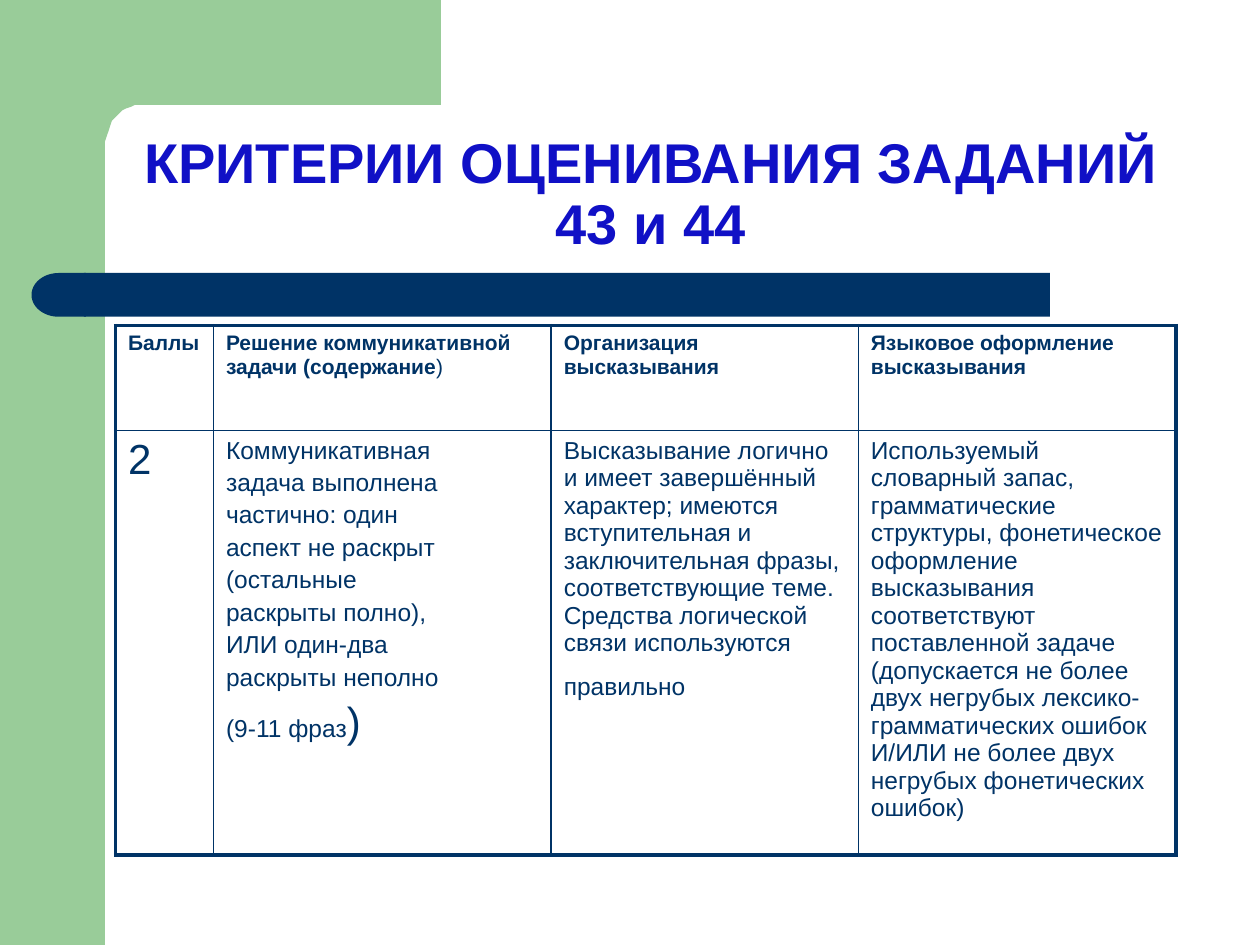
"""Build the slide with the scoring criteria for tasks 43 and 44."""
from math import cos, pi, sin

from lxml.etree import SubElement
from pptx import Presentation
from pptx.dml.color import RGBColor
from pptx.enum.shapes import MSO_SHAPE
from pptx.enum.text import MSO_ANCHOR, PP_ALIGN
from pptx.oxml.ns import qn
from pptx.util import Pt

GREEN = RGBColor(0x99, 0xCC, 0x99)
NAVY = RGBColor(0x00, 0x33, 0x66)
BLUE = RGBColor(0x10, 0x10, 0xC6)
FONT = "Arial"
TITLE = "КРИТЕРИИ ОЦЕНИВАНИЯ ЗАДАНИЙ 43 и 44"
COLUMNS = [56, 193, 175.5, 181.5]
ROWS = [60, 233]
THICK, THIN = 2.25, 1

HEADER = [
    [[("Баллы", 12, True)]],
    [[("Решение коммуникативной задачи (содержание", 12, True), (")", 12, False)]],
    [[("Организация высказывания", 12, True)]],
    [[("Языковое оформление высказывания", 12, True)]],
]
CONTENT_LINES = [
    "Коммуникативная",
    "задача выполнена",
    "частично: один",
    "аспект не раскрыт",
    "(остальные",
    "раскрыты полно),",
    "ИЛИ один-два",
    "раскрыты неполно",
]
ORGANISATION = (
    "Высказывание логично и имеет завершённый характер; имеются "
    "вступительная и заключительная фразы, соответствующие теме. "
    "Средства логической связи используются правильно"
)
LANGUAGE = (
    "Используемый словарный запас, грамматические структуры, фонетическое "
    "оформление высказывания соответствуют поставленной задаче (допускается "
    "не более двух негрубых лексико-грамматических ошибок И/ИЛИ не более "
    "двух негрубых фонетических ошибок)"
)
SCORE_ROW = [
    [[("2", 24, False)]],
    [[(line, 14, False)] for line in CONTENT_LINES]
    + [[("(9-11 фраз", 14, False), (")", 24, False)]],
    [[(ORGANISATION, 14, False), (" ", 24, False)]],
    [[(LANGUAGE, 14, False)]],
]


def paint(sp, color):
    """Give a shape a plain fill without line or shadow."""
    sp.fill.solid()
    sp.fill.fore_color.rgb = color
    sp.line.fill.background()
    sp.shadow.inherit = False


def add_block(slide, kind, left, top, width, height, color):
    """Add a filled preset shape."""
    sp = slide.shapes.add_shape(kind, Pt(left), Pt(top), Pt(width), Pt(height))
    paint(sp, color)
    return sp


def add_corner(slide):
    """Add the green top band with its rounded inner corner."""
    angles = [step * pi / 24 for step in range(13)]
    arc = [(80 - 20 * sin(a), 84 - 24 * cos(a)) for a in angles]
    points = [(252, 0), (252, 60), *arc, (60, 92), (36, 92), (36, 0)]
    builder = slide.shapes.build_freeform(*points[0], scale=Pt(1))
    builder.add_line_segments(points[1:], close=True)
    paint(builder.convert_to_shape(), GREEN)


def format_run(r, size, bold, color):
    """Set the font of a run."""
    r.font.name = FONT
    r.font.size = Pt(size)
    r.font.bold = bold
    r.font.color.rgb = color


def add_title(slide):
    """Add the centred slide title."""
    tf = slide.shapes.add_textbox(Pt(60), Pt(60), Pt(624), Pt(90)).text_frame
    tf.word_wrap = True
    tf.vertical_anchor = MSO_ANCHOR.BOTTOM
    tf.text = TITLE
    p = tf.paragraphs[0]
    p.alignment = PP_ALIGN.CENTER
    p.line_spacing = 0.9
    format_run(p.runs[0], 32, True, BLUE)


def fill_cell(cell, paragraphs):
    """Write the paragraphs of a cell, each a list of text, size and bold."""
    cell.fill.background()
    tf = cell.text_frame
    for i, runs in enumerate(paragraphs):
        p = tf.add_paragraph() if i else tf.paragraphs[0]
        p.space_before = Pt(0.2 * max(size for _, size, _ in runs))
        for text, size, bold in runs:
            r = p.add_run()
            r.text = text
            format_run(r, size, bold, NAVY)


def set_borders(cell, widths):
    """Draw the left, right, top and bottom borders of a cell."""
    tc_pr = cell._tc.get_or_add_tcPr()
    for i, (side, width) in enumerate(zip("LRTB", widths)):
        ln = SubElement(tc_pr, qn(f"a:ln{side}"), w=str(Pt(width)))
        fill = SubElement(ln, qn("a:solidFill"))
        SubElement(fill, qn("a:srgbClr"), val=str(NAVY))
        tc_pr.insert(i, ln)


def add_criteria(slide):
    """Add the criteria table with a thick outer frame."""
    rows = [HEADER, SCORE_ROW]
    frame = slide.shapes.add_table(
        len(ROWS), len(COLUMNS), Pt(66), Pt(186), Pt(sum(COLUMNS)), Pt(sum(ROWS))
    )
    table = frame.table
    table.first_row = table.horz_banding = False
    for column, width in zip(table.columns, COLUMNS):
        column.width = Pt(width)
    for i, height in enumerate(ROWS):
        table.rows[i].height = Pt(height)
        for j, paragraphs in enumerate(rows[i]):
            cell = table.cell(i, j)
            fill_cell(cell, paragraphs)
            outer = (j == 0, j == len(COLUMNS) - 1, i == 0, i == len(ROWS) - 1)
            set_borders(cell, [THICK if edge else THIN for edge in outer])


def main():
    """Build and save the slide."""
    prs = Presentation()
    prs.slide_width, prs.slide_height = Pt(720), Pt(540)
    slide = prs.slides.add_slide(prs.slide_layouts[6])
    add_block(slide, MSO_SHAPE.RECTANGLE, 0, 0, 60, 540, GREEN)
    add_corner(slide)
    add_block(slide, MSO_SHAPE.RECTANGLE, 48, 156, 552, 25, NAVY)
    cap = add_block(slide, MSO_SHAPE.FLOWCHART_DELAY, 18, 156, 31, 25, NAVY)
    cap.rotation = 180
    add_title(slide)
    add_criteria(slide)
    prs.save("out.pptx")


if __name__ == "__main__":
    main()
